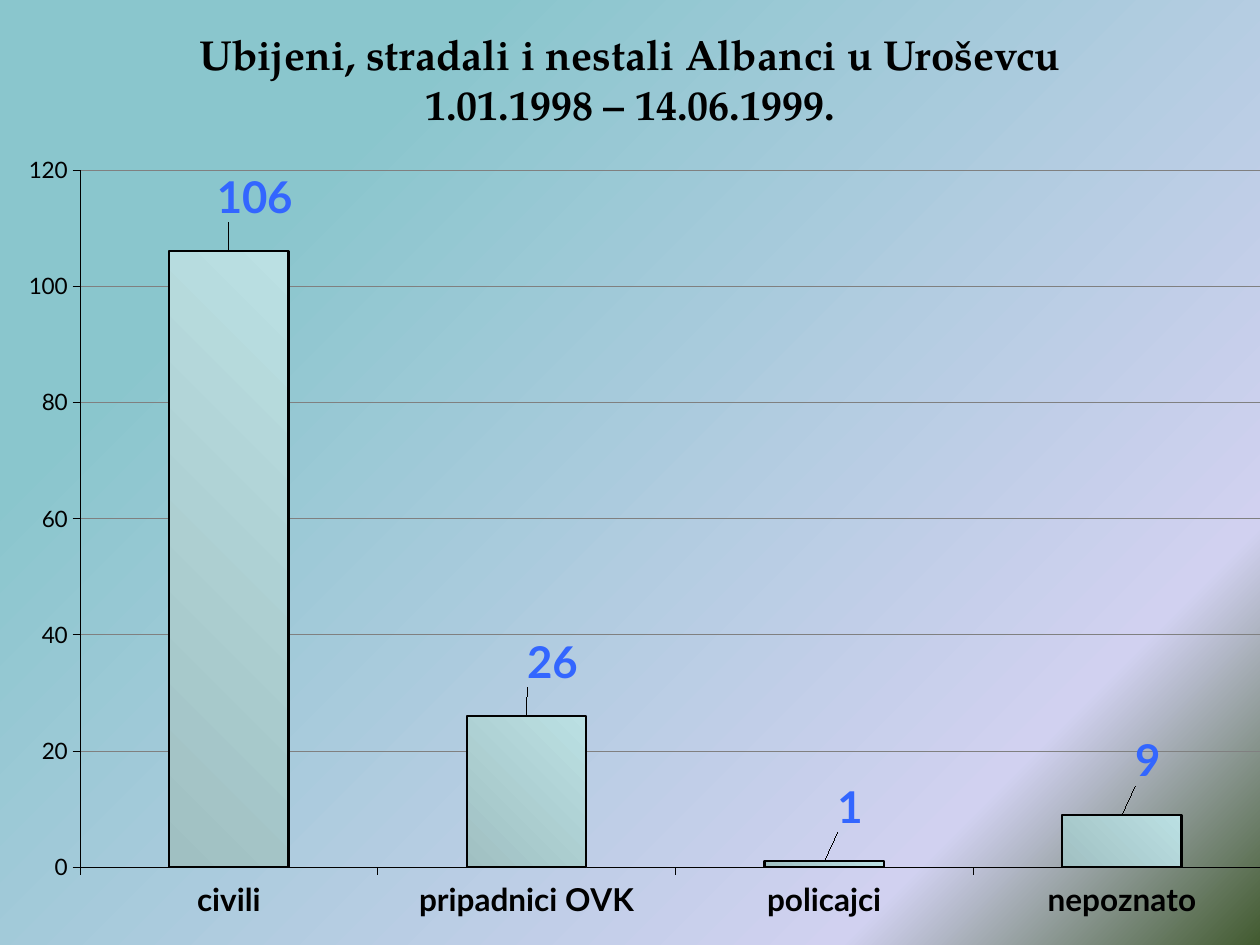
from dataclasses import dataclass

from lxml import etree
from pptx import Presentation
from pptx.chart.data import CategoryChartData
from pptx.dml.color import RGBColor as RGB
from pptx.enum.chart import XL_CHART_TYPE as ChartType
from pptx.enum.chart import XL_LABEL_POSITION as LabelPos
from pptx.enum.chart import XL_TICK_MARK as Tick
from pptx.enum.text import MSO_ANCHOR as Anchor
from pptx.enum.text import PP_ALIGN as Align
from pptx.oxml import parse_xml
from pptx.oxml.ns import qn
from pptx.util import Inches, Pt


@dataclass(frozen=True)
class Theme:
    title_font: str = "TeX Gyre Pagella"
    chart_font: str = "Lato"
    ink: str = "000000"
    grid: str = "808080"
    label: str = "3366FF"
    # stops are (position %, colour, opacity %)
    backdrop: tuple = ((22, "8AC6CD", 100), (81, "D1D1F0", 91), (100, "425B30", 100))
    bar: tuple = ((0, "A0C0C2", 100), (100, "BBE0E3", 100))
    title_size: float = 24
    label_size: float = 25
    category_size: float = 18
    value_size: float = 12.9
    thin: float = 0.32
    outline: float = 1.29


T = Theme()
TITLE = ("Ubijeni, stradali i nestali Albanci u Uroševcu", "1.01.1998 – 14.06.1999.")
DEATHS = {"civili": 106, "pripadnici OVK": 26, "policajci": 1, "nepoznato": 9}


def swap_for_gradient(solid, stops, angle):
    """Replace a solidFill element by a linear gradient."""
    stop_xml = "".join(
        f'<a:gs pos="{pos * 1000}"><a:srgbClr val="{color}">'
        f'<a:alpha val="{alpha * 1000}"/></a:srgbClr></a:gs>'
        for pos, color, alpha in stops
    )
    gradient = parse_xml(
        '<a:gradFill xmlns:a="http://schemas.openxmlformats.org/drawingml/2006/main" '
        f'rotWithShape="1"><a:gsLst>{stop_xml}</a:gsLst>'
        f'<a:lin ang="{angle * 60000}" scaled="0"/></a:gradFill>'
    )
    solid.getparent().replace(solid, gradient)


def manual_layout(**values):
    """Build a c:layout element from its manualLayout values."""
    layout = etree.Element(qn("c:layout"))
    manual = etree.SubElement(layout, qn("c:manualLayout"))
    for name, value in values.items():
        etree.SubElement(manual, qn(f"c:{name}")).set("val", str(value))
    return layout


def set_font(font, name, size, color, bold=True):
    font.name, font.size, font.bold = name, Pt(size), bold
    font.color.rgb = RGB.from_string(color)


def set_line(line, color, width):
    line.color.rgb = RGB.from_string(color)
    line.width = Pt(width)


def paint_background(s):
    s.background.fill.solid()
    swap_for_gradient(s.element.xpath(".//p:bgPr/a:solidFill")[0], T.backdrop, 45)


def add_title(s, left, top, width, height):
    tf = s.shapes.add_textbox(left, top, width, height).text_frame
    tf.word_wrap = True
    tf.vertical_anchor = Anchor.MIDDLE
    p = tf.paragraphs[0]
    p.alignment = Align.CENTER
    set_font(p.font, T.title_font, T.title_size, T.ink)
    p.add_run().text = TITLE[0]
    p.add_line_break()
    p.add_run().text = TITLE[1]


def style_axis(axis, size, bold):
    set_font(axis.tick_labels.font, T.chart_font, size, T.ink, bold)
    set_line(axis.format.line, T.ink, T.thin)
    axis.major_tick_mark = Tick.OUTSIDE
    axis.minor_tick_mark = Tick.NONE


def style_bars(chart):
    plot = chart.plots[0]
    plot.gap_width = 150
    plot.vary_by_categories = False
    bars = plot.series[0]
    bars.invert_if_negative = False
    bars.format.fill.solid()
    set_line(bars.format.line, T.ink, T.outline)
    for i in range(len(DEATHS)):
        label = bars.points[i].data_label
        set_font(label.font, T.chart_font, T.label_size, T.label)
        label.position = LabelPos.OUTSIDE_END


def add_death_chart(s, left, top, width, height):
    data = CategoryChartData()
    data.categories = list(DEATHS)
    data.add_series("Series 1", list(DEATHS.values()))
    chart = s.shapes.add_chart(
        ChartType.COLUMN_CLUSTERED, left, top, width, height, data
    ).chart
    chart.has_legend = chart.has_title = False
    set_font(chart.font, T.chart_font, T.category_size, T.ink)

    style_axis(chart.category_axis, T.category_size, True)
    values = chart.value_axis
    style_axis(values, T.value_size, False)
    values.minimum_scale, values.maximum_scale, values.major_unit = 0, 120, 20
    set_line(values.major_gridlines.format.line, T.grid, T.thin)
    style_bars(chart)

    root = chart._chartSpace
    swap_for_gradient(root.xpath(".//c:ser/c:spPr/a:solidFill")[0], T.bar, 315)
    for idx in root.xpath(".//c:dLbl/c:idx"):
        idx.addnext(manual_layout(x=0.02, y=-0.03))
    plot_area = root.xpath(".//c:plotArea")[0]
    for old in plot_area.xpath("./c:layout"):
        plot_area.remove(old)
    plot_area.insert(0, manual_layout(
        layoutTarget="inner", xMode="edge", yMode="edge",
        x=0.062, y=0.022, w=0.922, h=0.88,
    ))


def main():
    prs = Presentation()
    prs.slide_width, prs.slide_height = Inches(10), Inches(7.5)
    s = prs.slides.add_slide(prs.slide_layouts[6])
    paint_background(s)
    add_death_chart(s, Inches(0), Inches(1.21), Inches(10.25), Inches(6.29))
    add_title(s, Inches(0), Inches(0), Inches(10), Inches(1.25))
    prs.save("out.pptx")


if __name__ == "__main__":
    main()
